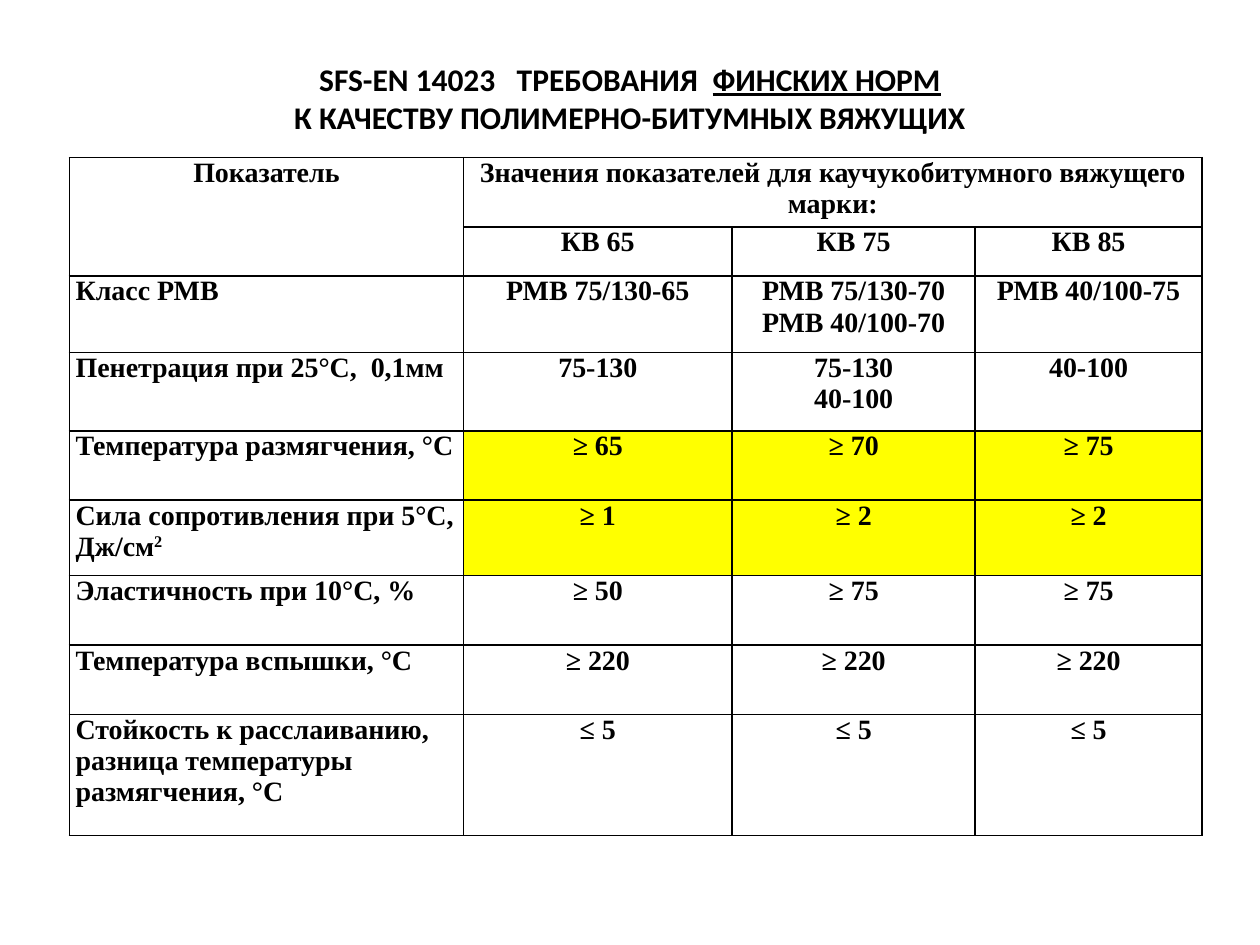
from dataclasses import dataclass

from lxml.etree import SubElement
from pptx import Presentation
from pptx.dml.color import RGBColor as RGB
from pptx.enum.text import MSO_ANCHOR as Anchor, MSO_AUTO_SIZE as AutoSize, PP_ALIGN as Align
from pptx.oxml.ns import qn
from pptx.util import Inches, Pt


@dataclass(frozen=True)
class Theme:
    ink: RGB = RGB(0, 0, 0)
    highlight: RGB = RGB(255, 255, 0)
    title_font: str = "Calibri"
    table_font: str = "Times New Roman"
    title_size: Pt = Pt(18)
    table_size: Pt = Pt(16)
    border: Pt = Pt(1)


@dataclass(frozen=True)
class Requirement:
    name: str
    values: tuple[str, str, str]
    height: float
    highlighted: bool = False
    superscript: str = ""


THEME = Theme()
COLUMNS = (3.13, 2.13, 1.93, 1.8)
HEADER_HEIGHTS = (0.55, 0.39)
GRADES = ("КВ 65", "КВ 75", "КВ 85")
REQUIREMENTS = (
    Requirement("Класс РМВ", ("РМВ 75/130-65", "РМВ 75/130-70\nРМВ 40/100-70", "РМВ 40/100-75"), 0.61),
    Requirement("Пенетрация при 25°С,  0,1мм", ("75-130", "75-130\n40-100", "40-100"), 0.62),
    Requirement("Температура размягчения, °С", ("≥ 65", "≥ 70", "≥ 75"), 0.55, True),
    Requirement("Сила сопротивления при 5°С, Дж/см", ("≥ 1", "≥ 2", "≥ 2"), 0.6, True, "2"),
    Requirement("Эластичность при 10°С, %", ("≥ 50", "≥ 75", "≥ 75"), 0.55),
    Requirement("Температура вспышки, °С", ("≥ 220",) * 3, 0.55),
    Requirement("Стойкость к расслаиванию, разница температуры размягчения, °С", ("≤ 5",) * 3, 0.96),
)


def style_run(r, font: str, size: Pt) -> None:
    r.font.name = font
    r.font.size = size
    r.font.bold = True
    r.font.color.rgb = THEME.ink


def add_title(s) -> None:
    sp = s.shapes.title
    sp.left, sp.top, sp.width, sp.height = map(Inches, (0.5, 0.3, 9, 1.25))
    tf = sp.text_frame
    tf.auto_size = AutoSize.NONE
    tf.word_wrap = True
    tf.vertical_anchor = Anchor.MIDDLE
    tf.margin_bottom = Inches(0.35)
    p = tf.paragraphs[0]
    p.alignment = Align.CENTER
    p.add_run().text = "SFS-EN 14023   ТРЕБОВАНИЯ  "
    r = p.add_run()
    r.text = "ФИНСКИХ НОРМ"
    r.font.underline = True
    p.add_line_break()
    p.add_run().text = "К КАЧЕСТВУ ПОЛИМЕРНО-БИТУМНЫХ ВЯЖУЩИХ"
    for r in p.runs:
        style_run(r, THEME.title_font, THEME.title_size)
    for br in p._p.findall(qn("a:br")):
        SubElement(br, qn("a:rPr"), sz=str(THEME.title_size.centipoints))


def set_borders(cell) -> None:
    tc_pr = cell._tc.get_or_add_tcPr()
    for side in ("lnL", "lnR", "lnT", "lnB"):
        ln = SubElement(tc_pr, qn(f"a:{side}"), w=str(int(THEME.border)))
        fill = SubElement(ln, qn("a:solidFill"))
        SubElement(fill, qn("a:srgbClr"), val=str(THEME.ink))


def format_cell(cell) -> None:
    cell.margin_left = cell.margin_right = Inches(0.05)
    cell.margin_top = cell.margin_bottom = 0
    cell.vertical_anchor = Anchor.TOP
    set_borders(cell)
    cell.fill.background()


def write_cell(cell, text: str, align: Align = Align.CENTER, superscript: str = "") -> None:
    tf = cell.text_frame
    tf.text = text
    if superscript:
        r = tf.paragraphs[-1].add_run()
        r.text = superscript
        r._r.get_or_add_rPr().set("baseline", "30000")
    for p in tf.paragraphs:
        p.alignment = align
        for r in p.runs:
            style_run(r, THEME.table_font, THEME.table_size)


def write_requirement(table, row: int, req: Requirement) -> None:
    write_cell(table.cell(row, 0), req.name, Align.LEFT, req.superscript)
    for col, value in enumerate(req.values, start=1):
        cell = table.cell(row, col)
        write_cell(cell, value)
        if req.highlighted:
            cell.fill.solid()
            cell.fill.fore_color.rgb = THEME.highlight


def add_requirements_table(s) -> None:
    heights = (*HEADER_HEIGHTS, *(req.height for req in REQUIREMENTS))
    table = s.shapes.add_table(
        len(heights), len(COLUMNS),
        Inches(0.55), Inches(1.25), Inches(sum(COLUMNS)), Inches(sum(heights)),
    ).table
    table.first_row = table.horz_banding = False
    for column, width in zip(table.columns, COLUMNS):
        column.width = Inches(width)
    for row, height in zip(table.rows, heights):
        row.height = Inches(height)
    for cell in table.iter_cells():
        format_cell(cell)
    table.cell(0, 0).merge(table.cell(1, 0))
    table.cell(0, 1).merge(table.cell(0, 3))
    write_cell(table.cell(0, 0), "Показатель")
    write_cell(table.cell(0, 1), "Значения показателей для каучукобитумного вяжущего марки:")
    for col, grade in enumerate(GRADES, start=1):
        write_cell(table.cell(1, col), grade)
    for row, req in enumerate(REQUIREMENTS, start=len(HEADER_HEIGHTS)):
        write_requirement(table, row, req)


def main() -> None:
    prs = Presentation()
    prs.slide_width, prs.slide_height = Inches(10), Inches(7.5)
    s = prs.slides.add_slide(prs.slide_layouts[5])
    add_title(s)
    add_requirements_table(s)
    prs.save("out.pptx")


if __name__ == "__main__":
    main()
